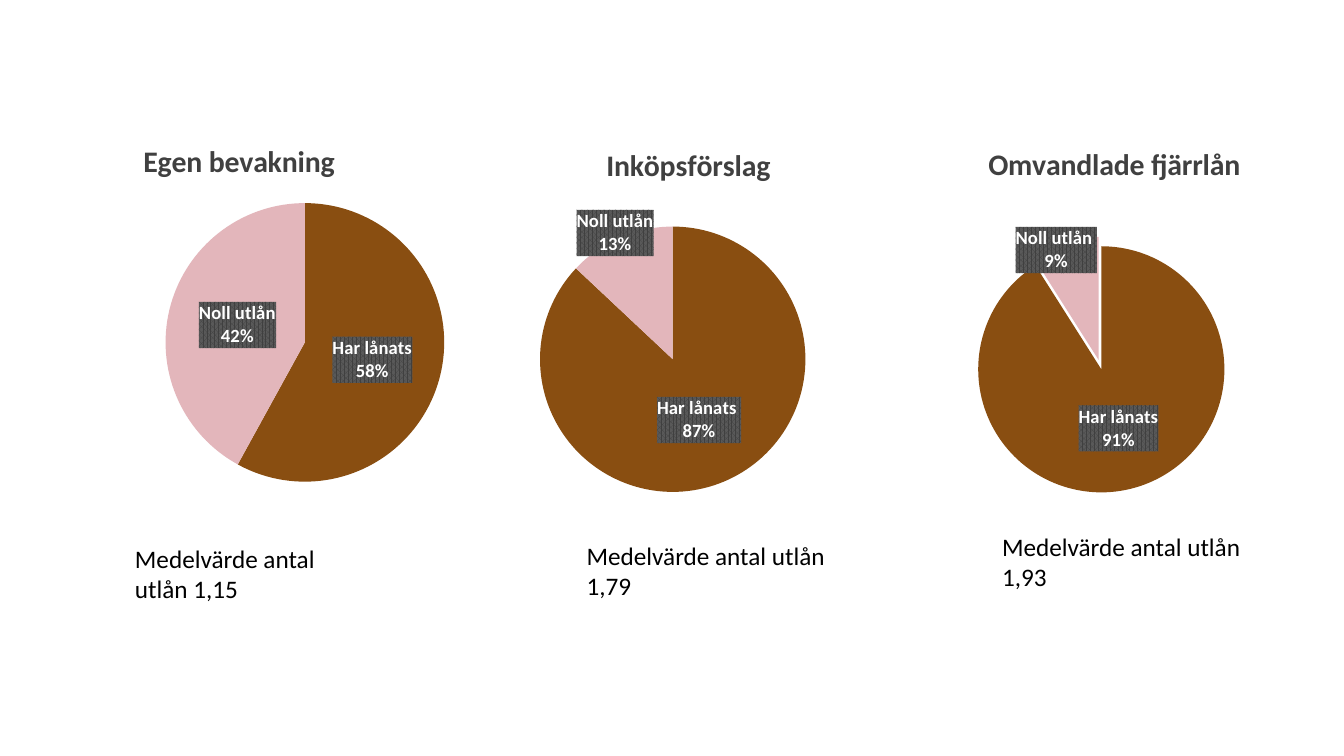
from dataclasses import dataclass

from lxml import etree
from pptx import Presentation
from pptx.chart.data import CategoryChartData
from pptx.dml.color import RGBColor
from pptx.enum.chart import XL_CHART_TYPE, XL_LABEL_POSITION
from pptx.enum.text import MSO_AUTO_SIZE
from pptx.oxml import parse_xml
from pptx.oxml.ns import nsdecls, qn
from pptx.util import Emu, Pt

PIE = XL_CHART_TYPE.PIE
CENTER = XL_LABEL_POSITION.CENTER
GROW = MSO_AUTO_SIZE.SHAPE_TO_FIT_TEXT

BROWN = RGBColor(0x89, 0x4E, 0x11)
PINK = RGBColor(0xE3, 0xB6, 0xBB)
BLACK = RGBColor(0, 0, 0)
WHITE = RGBColor(0xFF, 0xFF, 0xFF)
TITLE_GRAY = RGBColor(0x40, 0x40, 0x40)
LABEL_DARK = RGBColor(0x40, 0x40, 0x40)
LABEL_LIGHT = RGBColor(0x59, 0x59, 0x59)

FONT = "Calibri"
EMU_PER_PX = 9144  # 100 px to the inch

Box = tuple[int, int, int, int]


@dataclass(frozen=True)
class LoanPie:
    title: str
    categories: tuple[str, str]
    shares: tuple[int, int]
    box: Box
    title_at: tuple[float, float]
    plot: tuple[float, float, float, float]
    caption: str
    caption_box: Box
    label_shift: tuple[float, float] | None = None
    explosion: int = 0


PIES = (
    LoanPie("Egen bevakning", ("Har lånats", "Noll utlån"), (58, 42),
            (100, 124, 369, 354), (0.1, 0.03), (0.174, 0.219, 0.749, 0.781),
            "Medelvärde antal utlån 1,15", (124, 534, 231, 71)),
    LoanPie("Inköpsförslag", ("Har lånats ", "Noll utlån"), (87, 13),
            (445, 124, 444, 464), (0.34, 0.03), (0.204, 0.171, 0.593, 0.66),
            "Medelvärde antal utlån 1,79", (572, 531, 257, 71),
            label_shift=(-0.07, -0.14)),
    LoanPie("Omvandlade fjärrlån", ("Har lånats", "Noll utlån "), (91, 9),
            (825, 25, 500, 559), (0.3, 0.2), (0.278, 0.264, 0.508, 0.677),
            "Medelvärde antal utlån 1,93", (984, 522, 257, 71),
            label_shift=(-0.05, -0.09), explosion=4),
)


def px(*lengths: int) -> list[Emu]:
    return [Emu(length * EMU_PER_PX) for length in lengths]


def format_font(font, size: float, color: RGBColor, bold: bool = False) -> None:
    font.name = FONT
    font.size = Pt(size)
    font.bold = bold
    font.color.rgb = color


def set_layout(parent, index: int, *, edge: bool = True, **lengths: float) -> None:
    """Place a chart part by fractions of the chart's size."""
    for old in parent.findall(qn("c:layout")):
        parent.remove(old)
    modes = ('<c:layoutTarget val="inner"/>' if "w" in lengths else "")
    if edge:
        modes += '<c:xMode val="edge"/><c:yMode val="edge"/>'
    values = "".join(f'<c:{key} val="{value}"/>' for key, value in lengths.items())
    parent.insert(index, parse_xml(
        f'<c:layout {nsdecls("c")}><c:manualLayout>{modes}{values}'
        "</c:manualLayout></c:layout>"))


def finish_label(label) -> None:
    """Show category over percentage on a dark patterned box."""
    label.find(qn("c:txPr")).addprevious(parse_xml(
        f'<c:spPr {nsdecls("c", "a")}><a:pattFill prst="pct75">'
        f'<a:fgClr><a:srgbClr val="{LABEL_DARK}"/></a:fgClr>'
        f'<a:bgClr><a:srgbClr val="{LABEL_LIGHT}"/></a:bgClr>'
        "</a:pattFill><a:ln><a:noFill/></a:ln></c:spPr>"))
    for name, shown in (("showVal", "0"), ("showCatName", "1"), ("showPercent", "1")):
        label.find(qn(f"c:{name}")).set("val", shown)
    separator = etree.Element(qn("c:separator"))
    separator.text = "\n"
    label.find(qn("c:showBubbleSize")).addnext(separator)


def add_labels(series, shift: tuple[float, float] | None) -> None:
    labels = series.data_labels
    labels.number_format = "0%"
    labels.number_format_is_linked = False
    targets = [labels]
    if shift:
        targets.append(series.points[1].data_label)
    for target in targets:
        format_font(target.font, 13.3, WHITE, bold=True)
        target.position = CENTER
    group = series._element.find(qn("c:dLbls"))
    finish_label(group)
    for label in group.findall(qn("c:dLbl")):
        finish_label(label)
        set_layout(label, 1, edge=False, x=shift[0], y=shift[1])


def add_pie(slide, pie: LoanPie) -> None:
    data = CategoryChartData()
    data.categories = pie.categories
    data.add_series("Series 1", pie.shares)
    chart = slide.shapes.add_chart(PIE, *px(*pie.box), data).chart
    format_font(chart.font, 10, BLACK)
    chart.has_legend = False

    # Title and plot position
    chart.has_title = True
    span = chart.chart_title.text_frame.paragraphs[0].add_run()
    span.text = pie.title
    format_font(span.font, 21.3, TITLE_GRAY, bold=True)
    set_layout(chart.chart_title._element, 1, x=pie.title_at[0], y=pie.title_at[1])
    plot_area = chart._chartSpace.chart.plotArea
    set_layout(plot_area, 0, **dict(zip("xywh", pie.plot)))

    # Slices
    plot = chart.plots[0]
    plot.vary_by_categories = True
    series = plot.series[0]
    for index, color in enumerate((BROWN, PINK)):
        fill = series.points[index].format.fill
        fill.solid()
        fill.fore_color.rgb = color
    if pie.explosion:
        explosion = etree.Element(qn("c:explosion"), val=str(pie.explosion))
        series._element.find(qn("c:dPt")).addprevious(explosion)
    add_labels(series, pie.label_shift)


def add_text(slide, text: str, box: Box, *, size: float, color: RGBColor) -> None:
    frame = slide.shapes.add_textbox(*px(*box)).text_frame
    frame.word_wrap = True
    frame.auto_size = GROW
    span = frame.paragraphs[0].add_run()
    span.text = text
    format_font(span.font, size, color)


def main() -> None:
    deck = Presentation()
    deck.slide_width, deck.slide_height = px(1333, 750)
    page = deck.slides.add_slide(deck.slide_layouts[6])
    for pie in PIES:
        add_pie(page, pie)
        add_text(page, pie.caption, pie.caption_box, size=18, color=BLACK)
    deck.save("out.pptx")


if __name__ == "__main__":
    main()
